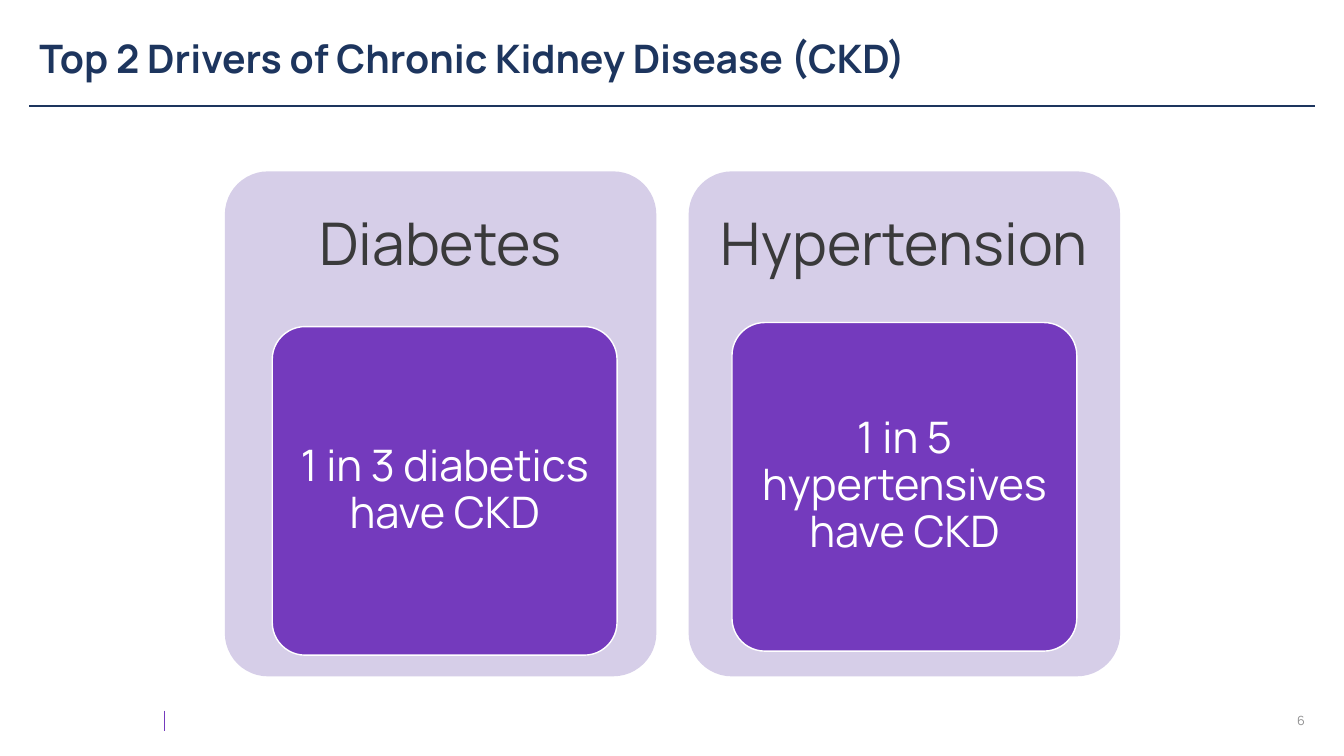
from dataclasses import dataclass

from lxml.etree import SubElement
from pptx import Presentation
from pptx.dml.color import RGBColor
from pptx.enum.shapes import MSO_CONNECTOR as Connector, MSO_SHAPE as Preset
from pptx.enum.text import MSO_ANCHOR as Anchor, MSO_AUTO_SIZE as AutoSize, PP_ALIGN as Align
from pptx.oxml.ns import qn
from pptx.util import Emu, Pt

EMU_PER_PX = 9144
FONT = "Manrope"
NAVY = "1D355E"
PURPLE = "743ABD"
LAVENDER = "D6CEE8"
CHARCOAL = "3A3A3B"
GREY = "919192"
WHITE = "FFFFFF"

PANEL_TOP, PANEL_WIDTH, PANEL_HEIGHT = 170, 428, 501
HEADING_HEIGHT = 150
CARD_WIDTH, CARD_HEIGHT = 342, 326


@dataclass(frozen=True)
class Driver:
    heading: str
    statement: str
    panel_left: int
    card_left: int
    card_top: int


@dataclass(frozen=True)
class Rule:
    start: tuple[int, int]
    end: tuple[int, int]
    color: str
    width: float


DRIVERS = [
    Driver("Diabetes", "1 in 3 diabetics have CKD", 223, 270, 324),
    Driver("Hypertension", "1 in 5 hypertensives have CKD", 683, 726, 320),
]
RULES = [
    Rule((29, 105), (1304, 105), NAVY, 1),
    Rule((163, 705), (163, 725), PURPLE, 0.5),
]


def px(length: int) -> Emu:
    return Emu(length * EMU_PER_PX)


def rgb(color: str) -> RGBColor:
    return RGBColor.from_string(color)


def write_text(shape, text: str, size: int, color: str, align=Align.CENTER,
               anchor=Anchor.MIDDLE, insets: tuple[int, int] = (10, 5),
               line_spacing: float = 0.9, bold: bool = False) -> None:
    frame = shape.text_frame
    frame.word_wrap = True
    frame.auto_size = AutoSize.NONE
    frame.vertical_anchor = anchor
    frame.margin_left = frame.margin_right = px(insets[0])
    frame.margin_top = frame.margin_bottom = px(insets[1])
    frame.text = text
    paragraph = frame.paragraphs[0]
    paragraph.alignment = align
    paragraph.line_spacing = line_spacing
    font = paragraph.font
    font.name, font.size, font.bold = FONT, Pt(size), bold
    font.color.rgb = rgb(color)


def add_text_box(slide, left: int, top: int, width: int, height: int):
    return slide.shapes.add_textbox(px(left), px(top), px(width), px(height))


def add_rounded(slide, left: int, top: int, width: int, height: int, fill: str):
    shape = slide.shapes.add_shape(
        Preset.ROUNDED_RECTANGLE, px(left), px(top), px(width), px(height))
    shape.adjustments[0] = 0.1
    shape.shadow.inherit = False
    shape.fill.solid()
    shape.fill.fore_color.rgb = rgb(fill)
    shape.line.fill.background()
    return shape


def add_rule(slide, rule: Rule) -> None:
    connector = slide.shapes.add_connector(
        Connector.STRAIGHT, *map(px, rule.start + rule.end))
    connector.line.color.rgb = rgb(rule.color)
    connector.line.width = Pt(rule.width)
    SubElement(connector._element.spPr, qn("a:effectLst"))


def add_driver(slide, driver: Driver) -> None:
    add_rounded(slide, driver.panel_left, PANEL_TOP, PANEL_WIDTH, PANEL_HEIGHT, LAVENDER)
    heading = add_text_box(slide, driver.panel_left, PANEL_TOP, PANEL_WIDTH, HEADING_HEIGHT)
    write_text(heading, driver.heading, 42, CHARCOAL, insets=(17, 17))
    card = add_rounded(slide, driver.card_left, driver.card_top, CARD_WIDTH, CARD_HEIGHT, PURPLE)
    card.line.color.rgb = rgb(WHITE)
    card.line.width = Pt(1)
    write_text(card, driver.statement, 31, WHITE, insets=(9, 6))


def main() -> None:
    presentation = Presentation()
    presentation.slide_width, presentation.slide_height = px(1333), px(750)
    slide = presentation.slides.add_slide(presentation.slide_layouts[5])

    title = slide.shapes.title
    title.left, title.top, title.width, title.height = map(px, (29, 26, 1275, 60))
    write_text(title, "Top 2 Drivers of Chronic Kidney Disease (CKD)", 28, NAVY,
               align=Align.LEFT, anchor=Anchor.BOTTOM, bold=True)

    for rule in RULES:
        add_rule(slide, rule)
    for driver in DRIVERS:
        add_driver(slide, driver)

    page_number = add_text_box(slide, 1004, 705, 300, 20)
    write_text(page_number, "6", 9, GREY, align=Align.RIGHT, line_spacing=1.0)

    presentation.save("out.pptx")


if __name__ == "__main__":
    main()
